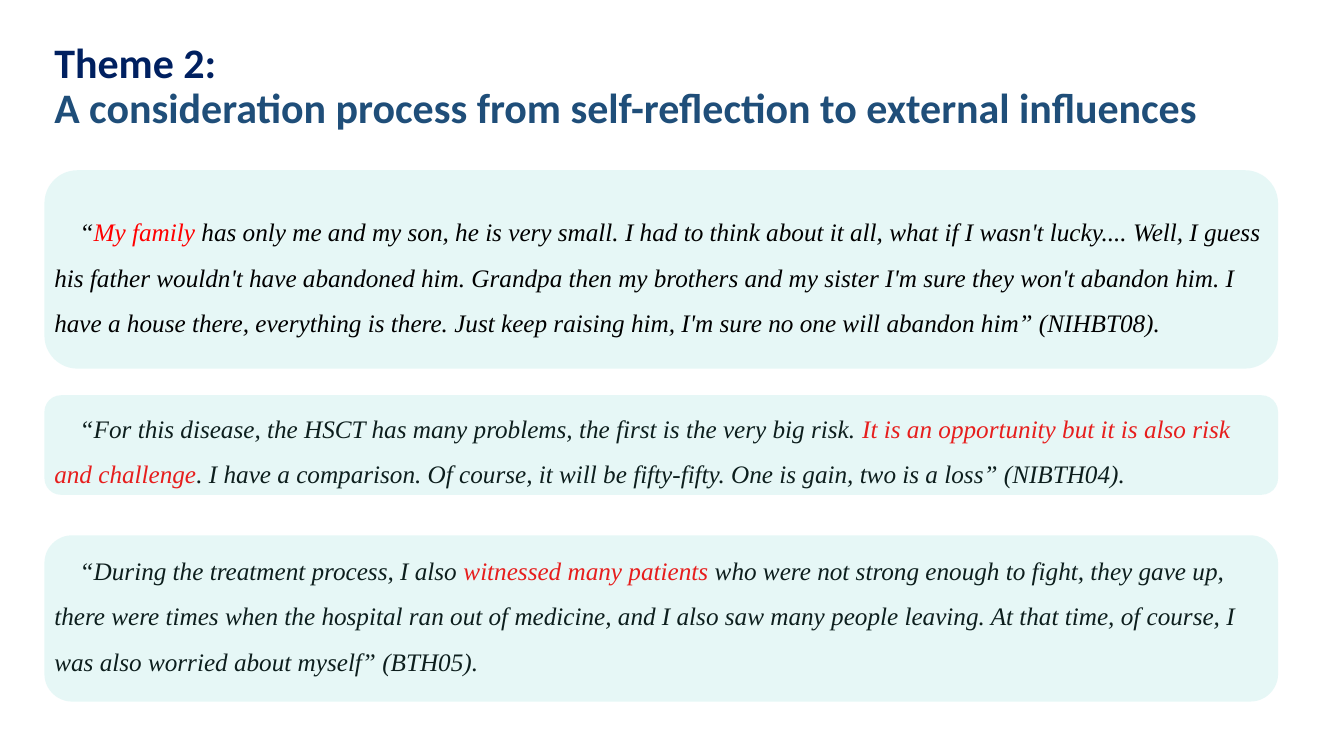
from lxml import etree
from pptx import Presentation
from pptx.dml.color import RGBColor
from pptx.enum.shapes import MSO_SHAPE as Shape
from pptx.enum.text import MSO_ANCHOR as Anchor, MSO_AUTO_SIZE as AutoSize
from pptx.oxml.ns import qn
from pptx.util import Cm, Pt

LEFT, CARD_WIDTH, TEXT_WIDTH = 1.12, 31.09, 30.91
BLACK, RED = "000000", "FF0000"


def rgb(value):
    return RGBColor.from_string(value)


def add_text(top, width, height):
    box = slide.shapes.add_textbox(Cm(LEFT), Cm(top), Cm(width), Cm(height))
    box.text_frame.word_wrap = True
    box.text_frame.vertical_anchor = Anchor.TOP
    return box


presentation = Presentation()
presentation.slide_width, presentation.slide_height = Cm(33.87), Cm(19.05)
slide = presentation.slides.add_slide(presentation.slide_layouts[6])

# Title
title = add_text(0.94, TEXT_WIDTH, 2.77)
title.text_frame.text = (
    "Theme 2:\nA consideration process from self-reflection to external influences"
)
for paragraph, color in zip(title.text_frame.paragraphs, ("002060", "1F4E79")):
    paragraph.line_spacing = 0.9
    font = paragraph.runs[0].font
    font.name, font.size, font.bold = "Calibri", Pt(30), True
    font.color.rgb = rgb(color)

# Quotes: card top and height, text top, width and height, text in front, runs
quotes = [
    (4.29, 5, 4.95, CARD_WIDTH, 3.71, True, [
        ("“", BLACK),
        ("My family ", RED),
        ("has only me and my son, he is very small. I had to think about it all, "
         "what if I wasn't lucky.... Well, I guess his father wouldn't have "
         "abandoned him. Grandpa then my brothers and my sister I'm sure they "
         "won't abandon him. I have a house there, everything is there. Just keep "
         "raising him, I'm sure no one will abandon him” (NIHBT08).", BLACK),
    ]),
    (9.96, 2.51, 9.91, TEXT_WIDTH, 2.57, False, [
        ("“For this disease, the HSCT has many problems, the first is the very "
         "big risk. ", BLACK),
        ("It is an opportunity but it is also risk and challenge", RED),
        (". I have a comparison. Of course, it will be fifty-fifty. One is gain, "
         "two is a loss” (NIBTH04).", BLACK),
    ]),
    (13.49, 4.19, 13.49, TEXT_WIDTH, 3.71, False, [
        ("“During the treatment process, I also ", BLACK),
        ("witnessed many patients ", RED),
        ("who were not strong enough to fight, they gave up, there were times when "
         "the hospital ran out of medicine, and I also saw many people leaving. At "
         "that time, of course, I was also worried about myself” (BTH05).", BLACK),
    ]),
]
for card_top, card_height, text_top, text_width, text_height, text_in_front, runs in quotes:
    # Translucent card
    card = slide.shapes.add_shape(
        Shape.FLOWCHART_ALTERNATE_PROCESS,
        Cm(LEFT), Cm(card_top), Cm(CARD_WIDTH), Cm(card_height),
    )
    card.shadow.inherit = False
    card.line.fill.background()
    card.fill.solid()
    card.fill.fore_color.rgb = rgb("5BCEC7")
    fill_color = card.fill._xPr.find(f"{qn('a:solidFill')}/{qn('a:srgbClr')}")
    etree.SubElement(fill_color, qn("a:alpha"), val="15000")

    # Quote with a first-line indent and its key phrase in red
    quote = add_text(text_top, text_width, text_height)
    quote.text_frame.auto_size = AutoSize.SHAPE_TO_FIT_TEXT
    paragraph = quote.text_frame.paragraphs[0]
    paragraph.line_spacing, paragraph.space_after = 1.5, Pt(8)
    paragraph._p.get_or_add_pPr().set("indent", str(Cm(0.64)))
    for text, color in runs:
        run = paragraph.add_run()
        run.text = text
        run.font.name, run.font.size, run.font.italic = "Times New Roman", Pt(18), True
        run.font.color.rgb = rgb(color)

    # The lower cards lie over their text and tint it
    if not text_in_front:
        quote._element.addnext(card._element)

presentation.save("out.pptx")
